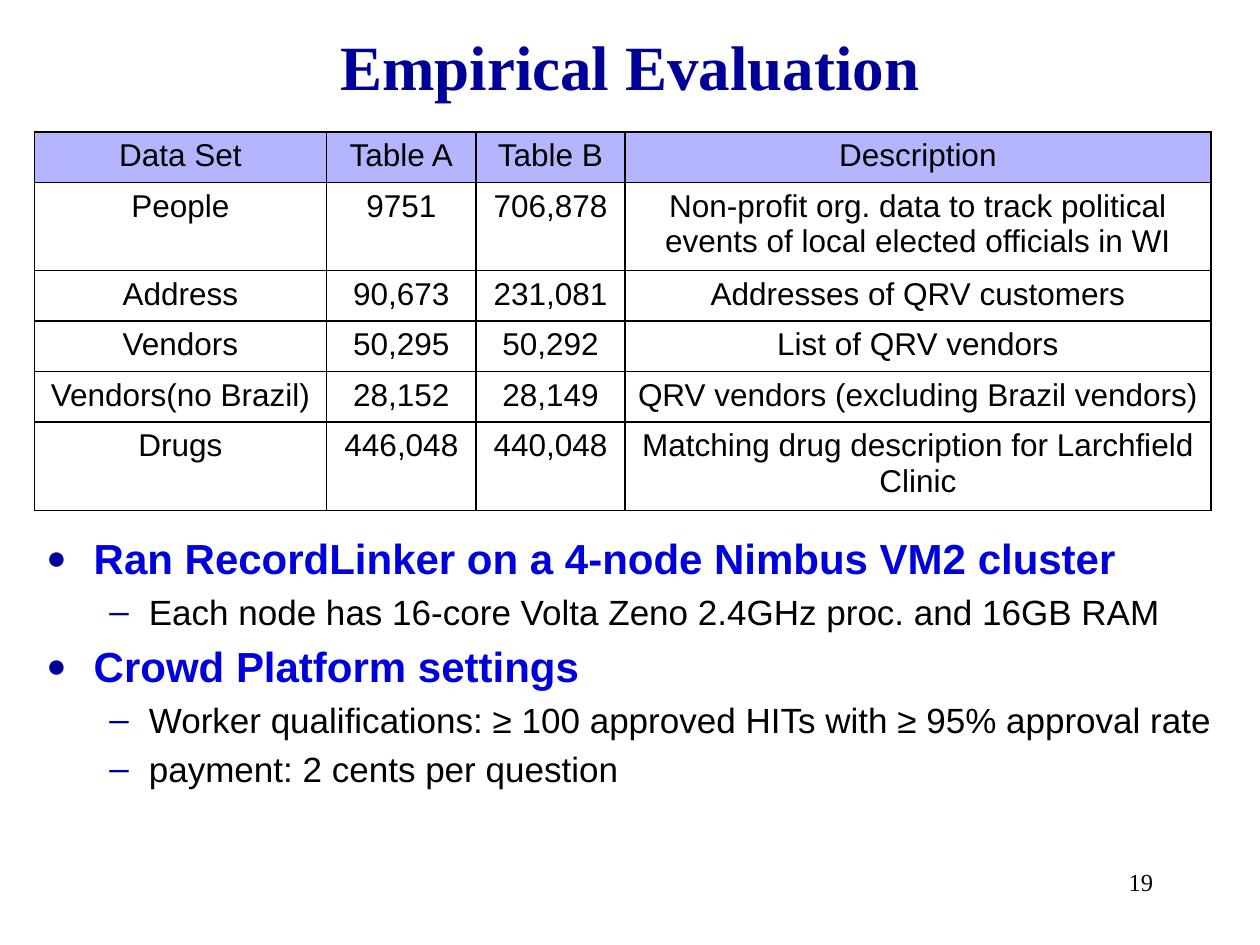
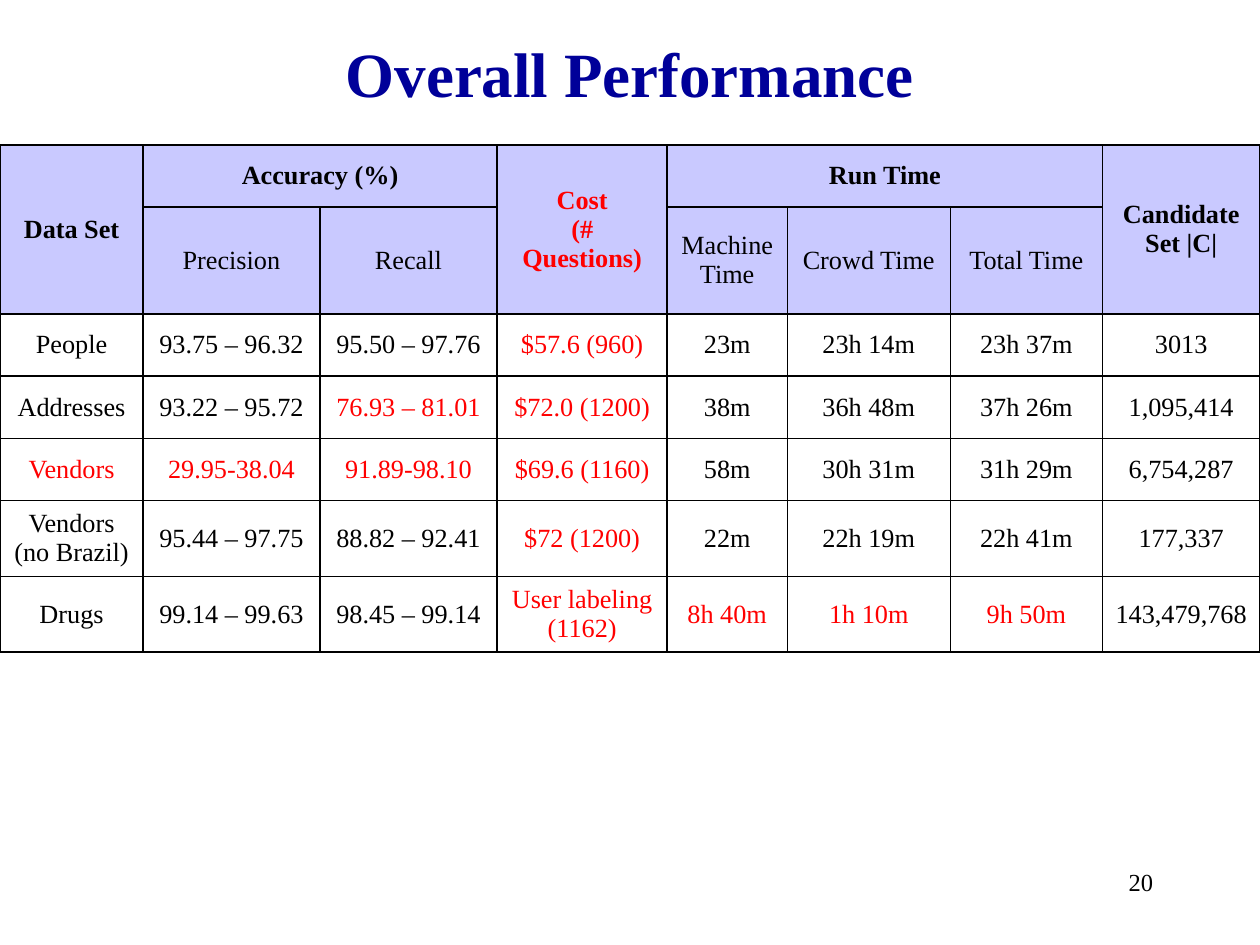
from dataclasses import dataclass

from lxml import etree
from pptx import Presentation
from pptx.dml.color import RGBColor
from pptx.enum.text import MSO_ANCHOR, PP_ALIGN
from pptx.oxml.ns import qn
from pptx.util import Pt

LEFT, CENTER, RIGHT = PP_ALIGN.LEFT, PP_ALIGN.CENTER, PP_ALIGN.RIGHT
TOP, MIDDLE = MSO_ANCHOR.TOP, MSO_ANCHOR.MIDDLE
BLANK_LAYOUT = 6


# Theme: colours, fonts and type sizes
@dataclass(frozen=True)
class Theme:
    navy: str = "000099"
    blue: str = "0000DC"
    black: str = "000000"
    red: str = "FF0000"
    white: str = "FFFFFF"
    data_header: str = "B5B5FF"
    result_header: str = "C9C9FF"
    serif: str = "Times New Roman"
    sans: str = "Arial"
    title_size: float = 36
    topic_size: float = 24
    detail_size: float = 20
    data_size: float = 18
    result_size: float = 15
    number_size: float = 14


THEME = Theme()


@dataclass(frozen=True)
class TextStyle:
    font: str
    size: float
    color: str = THEME.black
    bold: bool = False


@dataclass(frozen=True)
class Box:
    left: float
    top: float
    width: float
    height: float


@dataclass(frozen=True)
class BulletLevel:
    style: TextStyle
    mark: str
    mark_percent: int
    indent: float
    hanging: float


@dataclass(frozen=True)
class Span:
    row: int
    column: int
    last_row: int
    last_column: int


@dataclass(frozen=True)
class TableDesign:
    left: float
    top: float
    columns: tuple[float, ...]
    rows: tuple[float, ...]
    style: TextStyle
    anchor: MSO_ANCHOR
    header_fill: str
    body_fill: str | None = None
    header_rows: int = 1
    bold_rows: frozenset[int] = frozenset()
    red_cells: frozenset[tuple[int, int]] = frozenset()
    spans: tuple[Span, ...] = ()


TITLE = TextStyle(THEME.serif, THEME.title_size, THEME.navy, True)
NUMBER = TextStyle(THEME.serif, THEME.number_size)
NUMBER_BOX = Box(516.24, 491.76, 149.76, 36)

TOPIC = BulletLevel(TextStyle(THEME.sans, THEME.topic_size, THEME.blue, True),
                    "●", 80, 27, 27)
DETAIL = BulletLevel(TextStyle(THEME.sans, THEME.detail_size), "–", 100, 58.5, 22.5)


# Text helpers
def add_run(paragraph, text: str, style: TextStyle) -> None:
    run = paragraph.add_run()
    run.text = text
    settings = {"name": style.font, "size": Pt(style.size), "bold": style.bold}
    for name, value in settings.items():
        setattr(run.font, name, value)
    run.font.color.rgb = RGBColor.from_string(style.color)


def add_text_frame(slide, box: Box, anchor: MSO_ANCHOR):
    shape = slide.shapes.add_textbox(Pt(box.left), Pt(box.top),
                                     Pt(box.width), Pt(box.height))
    frame = shape.text_frame
    settings = {"word_wrap": True, "vertical_anchor": anchor}
    for name, value in settings.items():
        setattr(frame, name, value)
    return frame


def add_label(slide, box: Box, text: str, style: TextStyle,
              align: PP_ALIGN, anchor: MSO_ANCHOR = TOP) -> None:
    paragraph = add_text_frame(slide, box, anchor).paragraphs[0]
    paragraph.alignment = align
    add_run(paragraph, text, style)


def add_bullet(paragraph, text: str, level: BulletLevel) -> None:
    paragraph.alignment = LEFT
    add_run(paragraph, text, level.style)
    properties = paragraph._p.get_or_add_pPr()
    properties.set("marL", str(Pt(level.indent)))
    properties.set("indent", str(-Pt(level.hanging)))
    spacing = etree.SubElement(properties, qn("a:spcBef"))
    etree.SubElement(spacing, qn("a:spcPct"), val="20000")
    color = etree.SubElement(properties, qn("a:buClr"))
    etree.SubElement(color, qn("a:srgbClr"), val=THEME.navy)
    etree.SubElement(properties, qn("a:buSzPct"), val=str(level.mark_percent * 1000))
    etree.SubElement(properties, qn("a:buFont"), typeface=THEME.sans)
    etree.SubElement(properties, qn("a:buChar"), char=level.mark)


# Table helpers
def add_borders(cell) -> None:
    properties = cell._tc.get_or_add_tcPr()
    for position, side in enumerate(("lnL", "lnR", "lnT", "lnB")):
        line = etree.Element(qn(f"a:{side}"), w=str(Pt(1)))
        fill = etree.SubElement(line, qn("a:solidFill"))
        etree.SubElement(fill, qn("a:srgbClr"), val=THEME.black)
        properties.insert(position, line)


def format_cell(cell, fill: str | None, anchor: MSO_ANCHOR) -> None:
    cell.vertical_anchor = anchor
    if fill is None:
        cell.fill.background()
    else:
        cell.fill.solid()
        cell.fill.fore_color.rgb = RGBColor.from_string(fill)
    add_borders(cell)


def fill_cell(cell, text: str, style: TextStyle) -> None:
    frame = cell.text_frame
    for index, line in enumerate(text.split("\n")):
        paragraph = frame.add_paragraph() if index else frame.paragraphs[0]
        paragraph.alignment = CENTER
        add_run(paragraph, line, style)


def add_data_table(slide, design: TableDesign, content: list[tuple]) -> None:
    table = slide.shapes.add_table(
        len(design.rows), len(design.columns), Pt(design.left), Pt(design.top),
        Pt(sum(design.columns)), Pt(sum(design.rows))).table
    for name in ("first_row", "horz_banding"):
        setattr(table, name, False)
    for column, width in zip(table.columns, design.columns):
        column.width = Pt(width)
    for row, height in zip(table.rows, design.rows):
        row.height = Pt(height)
    for span in design.spans:
        table.cell(span.row, span.column).merge(
            table.cell(span.last_row, span.last_column))
    for row, texts in enumerate(content):
        fill = design.header_fill if row < design.header_rows else design.body_fill
        for column, text in enumerate(texts):
            cell = table.cell(row, column)
            format_cell(cell, fill, design.anchor)
            if text is not None:
                color = THEME.red if (row, column) in design.red_cells else THEME.black
                fill_cell(cell, text, TextStyle(design.style.font, design.style.size,
                                                color, row in design.bold_rows))


# Shared slide frame
def add_slide(presentation, title: str, title_top: float, number: int):
    slide = presentation.slides.add_slide(presentation.slide_layouts[BLANK_LAYOUT])
    add_label(slide, Box(54, title_top, 612, 54), title, TITLE, CENTER, MIDDLE)
    add_label(slide, NUMBER_BOX, str(number), NUMBER, RIGHT)
    return slide


# Data sets and experiment settings
DATA_SETS = [
    ("Data Set", "Table A", "Table B", "Description"),
    ("People", "9751", "706,878",
     "Non-profit org. data to track political events of local elected officials in WI"),
    ("Address", "90,673", "231,081", "Addresses of QRV customers"),
    ("Vendors", "50,295", "50,292", "List of QRV vendors"),
    ("Vendors(no Brazil)", "28,152", "28,149", "QRV vendors (excluding Brazil vendors)"),
    ("Drugs", "446,048", "440,048", "Matching drug description for Larchfield Clinic"),
]
ONE_LINE, TWO_LINES = 27.4, 47.4
DATA_DESIGN = TableDesign(
    left=19.6, top=75.4, columns=(167.04, 85.5, 85, 334.8),
    rows=(ONE_LINE, TWO_LINES, ONE_LINE, ONE_LINE, ONE_LINE, TWO_LINES),
    style=TextStyle(THEME.sans, THEME.data_size), anchor=TOP,
    header_fill=THEME.data_header, body_fill=THEME.white)

SETTINGS = [
    (TOPIC, "Ran RecordLinker on a 4-node Nimbus VM2 cluster"),
    (DETAIL, "Each node has 16-core Volta Zeno 2.4GHz proc. and 16GB RAM"),
    (TOPIC, "Crowd Platform settings"),
    (DETAIL, "Worker qualifications: ≥ 100 approved HITs with ≥ 95% approval rate"),
    (DETAIL, "payment: 2 cents per question"),
]


def build_evaluation(presentation) -> None:
    slide = add_slide(presentation, "Empirical Evaluation", 10.08, 19)
    frame = add_text_frame(slide, Box(19.44, 300.96, 682.56, 188.64), TOP)
    for index, (level, text) in enumerate(SETTINGS):
        paragraph = frame.add_paragraph() if index else frame.paragraphs[0]
        add_bullet(paragraph, text, level)
    add_data_table(slide, DATA_DESIGN, DATA_SETS)


# Accuracy, cost and run time
RESULTS = [
    ("Data Set", "Accuracy (%)", None, "Cost\n(# Questions)", "Run Time", None, None,
     "Candidate Set |C|"),
    (None, "Precision", "Recall", None, "Machine Time", "Crowd Time", "Total Time", None),
    ("People", "93.75 – 96.32", "95.50 – 97.76", "$57.6 (960)",
     "23m", "23h 14m", "23h 37m", "3013"),
    ("Addresses", "93.22 – 95.72", "76.93 – 81.01", "$72.0 (1200)",
     "38m", "36h 48m", "37h 26m", "1,095,414"),
    ("Vendors", "29.95-38.04", "91.89-98.10", "$69.6 (1160)",
     "58m", "30h 31m", "31h 29m", "6,754,287"),
    ("Vendors (no Brazil)", "95.44 – 97.75", "88.82 – 92.41", "$72 (1200)",
     "22m", "22h 19m", "22h 41m", "177,337"),
    ("Drugs", "99.14 – 99.63", "98.45 – 99.14", "User labeling (1162)",
     "8h 40m", "1h 10m", "9h 50m", "143,479,768"),
]
COST_COLUMN = 3
COST_CELLS = {(row, COST_COLUMN) for row in range(len(RESULTS))}
NOTABLE_CELLS = {(3, 2), (4, 0), (4, 1), (4, 2), (6, 4), (6, 5), (6, 6)}
RESULT_DESIGN = TableDesign(
    left=0, top=82.8, columns=(81.8, 101, 101.3, 97.2, 68.6, 93.2, 87, 89.9),
    rows=(35.4, 56.8, 35.6, 35.6, 35.6, 40.5, 40.5),
    style=TextStyle(THEME.serif, THEME.result_size), anchor=MIDDLE,
    header_fill=THEME.result_header, header_rows=2, bold_rows=frozenset({0}),
    red_cells=frozenset(COST_CELLS | NOTABLE_CELLS),
    spans=(Span(0, 0, 1, 0), Span(0, 1, 0, 2), Span(0, 3, 1, 3),
           Span(0, 4, 0, 6), Span(0, 7, 1, 7)))


def build_performance(presentation) -> None:
    slide = add_slide(presentation, "Overall Performance", 14.4, 20)
    add_data_table(slide, RESULT_DESIGN, RESULTS)


def main() -> None:
    presentation = Presentation()
    presentation.slide_width, presentation.slide_height = Pt(720), Pt(540)
    build_evaluation(presentation)
    build_performance(presentation)
    presentation.save("out.pptx")


if __name__ == "__main__":
    main()
